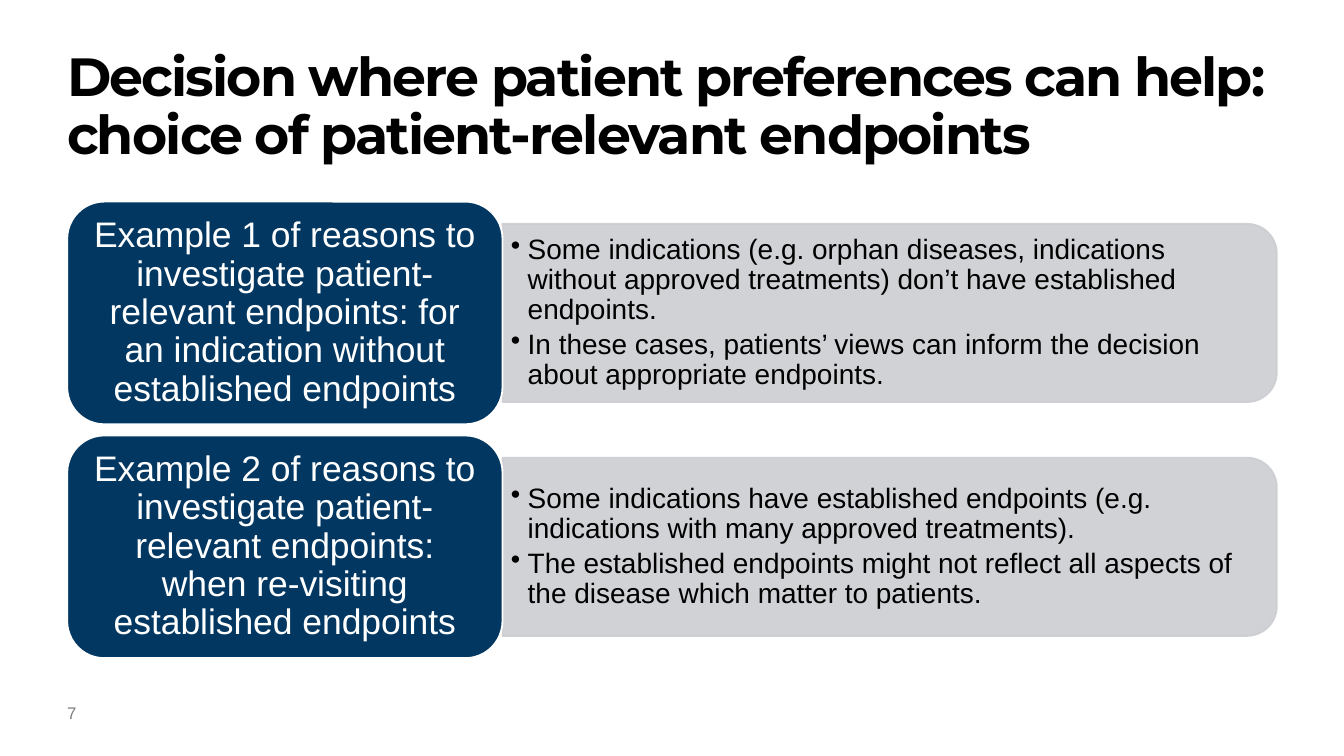
from lxml import etree
from pptx import Presentation
from pptx.dml.color import RGBColor
from pptx.enum.shapes import MSO_SHAPE
from pptx.enum.text import MSO_ANCHOR, MSO_AUTO_SIZE, PP_ALIGN
from pptx.oxml.ns import qn
from pptx.util import Pt

LEFT, CENTER = PP_ALIGN.LEFT, PP_ALIGN.CENTER
TOP, MIDDLE = MSO_ANCHOR.TOP, MSO_ANCHOR.MIDDLE

# Content
TITLE = "Decision where patient preferences can help: choice of patient-relevant endpoints"
PAGE_NUMBER = "7"
EXAMPLES = [
    ("Example 1 of reasons to investigate patient-relevant endpoints: "
     "for an indication without established endpoints",
     ["Some indications (e.g. orphan diseases, indications without approved "
      "treatments) don’t have established endpoints.",
      "In these cases, patients’ views can inform the decision about "
      "appropriate endpoints."]),
    ("Example 2 of reasons to investigate patient-relevant endpoints: "
     "when re-visiting established endpoints",
     ["Some indications have established endpoints (e.g. indications with "
      "many approved treatments).",
      "The established endpoints might not reflect all aspects of the disease "
      "which matter to patients."]),
]
COLORS = {"black": "000000", "white": "FFFFFF", "navy": "023761",
          "panel": "CCCED2", "gray": "7F7F7F"}

# Layout, in points
SLIDE_WIDTH, SLIDE_HEIGHT = 720, 405
MARGIN = 36
CARD_TOP, CARD_WIDTH, CARD_HEIGHT, CARD_GAP = 108, 233.2, 119.3, 6
PANEL_LEFT = MARGIN + CARD_WIDTH
PANEL_WIDTH = SLIDE_WIDTH - MARGIN - PANEL_LEFT
PANEL_HEIGHT = 0.8 * CARD_HEIGHT
BULLET_WIDTH, BULLET_HEIGHT = 410.4, 86.4
BULLET_INDENT = 9


def color(name):
    return RGBColor.from_string(COLORS[name])


def write(shape, texts, size, font_color, font="Arial", bold=None, align=LEFT,
          anchor=TOP, insets=(0, 0), line_spacing=0.9, space_after=0,
          tracking=None, bullets=False):
    frame = shape.text_frame
    frame.word_wrap = True
    frame.auto_size = MSO_AUTO_SIZE.NONE
    frame.vertical_anchor = anchor
    frame.margin_left = frame.margin_right = Pt(insets[0])
    frame.margin_top = frame.margin_bottom = Pt(insets[1])
    for index, text in enumerate(texts):
        paragraph = frame.paragraphs[0] if index == 0 else frame.add_paragraph()
        paragraph.alignment = align
        paragraph.line_spacing = line_spacing
        paragraph.space_before = Pt(0)
        paragraph.space_after = Pt(space_after)
        if bullets:
            properties = paragraph._p.get_or_add_pPr()
            properties.set("marL", str(Pt(BULLET_INDENT)))
            properties.set("indent", str(-Pt(BULLET_INDENT)))
            etree.SubElement(properties, qn("a:buChar")).set("char", "•")
        run = paragraph.add_run()
        run.text = text
        run.font.name = font
        run.font.size = Pt(size)
        run.font.bold = bold
        run.font.color.rgb = color(font_color)
        if tracking is not None:
            run.font._element.set("spc", str(round(tracking * 100)))


def add_box(slide, kind, left, top, width, height, fill, line, opacity=None):
    shape = slide.shapes.add_shape(kind, Pt(left), Pt(top), Pt(width), Pt(height))
    shape.shadow.inherit = False
    shape.fill.solid()
    shape.fill.fore_color.rgb = color(fill)
    shape.line.color.rgb = color(line)
    shape.line.width = Pt(1)
    if opacity is not None:
        for rgb in shape._element.spPr.iter(qn("a:srgbClr")):
            etree.SubElement(rgb, qn("a:alpha")).set("val", str(opacity * 1000))
    return shape


def add_text_box(slide, left, top, width, height, texts, **text_format):
    box = slide.shapes.add_textbox(Pt(left), Pt(top), Pt(width), Pt(height))
    write(box, texts, **text_format)


def add_example(slide, top, heading, points):
    middle = top + CARD_HEIGHT / 2
    # Panel: a shape with two round top corners, turned a quarter clockwise
    panel = add_box(slide, MSO_SHAPE.ROUND_2_SAME_RECTANGLE,
                    PANEL_LEFT + (PANEL_WIDTH - PANEL_HEIGHT) / 2,
                    middle - PANEL_WIDTH / 2, PANEL_HEIGHT, PANEL_WIDTH,
                    "panel", "panel", opacity=90)
    panel.rotation = 90
    add_text_box(slide, PANEL_LEFT, middle - BULLET_HEIGHT / 2,
                 BULLET_WIDTH, BULLET_HEIGHT, points, size=15,
                 font_color="black", anchor=MIDDLE, insets=(4.5, 2.25),
                 space_after=2.25, bullets=True)
    # Heading card
    card = add_box(slide, MSO_SHAPE.ROUNDED_RECTANGLE, MARGIN, top,
                   CARD_WIDTH, CARD_HEIGHT, "navy", "white")
    write(card, [heading], size=19, font_color="white", align=CENTER,
          anchor=MIDDLE, insets=(5.7, 2.85))


def main():
    presentation = Presentation()
    presentation.slide_width = Pt(SLIDE_WIDTH)
    presentation.slide_height = Pt(SLIDE_HEIGHT)
    slide = presentation.slides.add_slide(presentation.slide_layouts[5])

    # Title
    title = slide.shapes.title
    title.left, title.top = Pt(MARGIN), Pt(27)
    title.width, title.height = Pt(SLIDE_WIDTH - 2 * MARGIN), Pt(75.6)
    write(title, [TITLE], size=28.8, font_color="black", font="Montserrat",
          bold=True, tracking=-1)

    # Page number
    add_text_box(slide, MARGIN, 376.5, 18, 18, [PAGE_NUMBER], size=9,
                 font_color="gray", line_spacing=1)

    # Examples
    for row, (heading, points) in enumerate(EXAMPLES):
        add_example(slide, CARD_TOP + row * (CARD_HEIGHT + CARD_GAP), heading, points)

    presentation.save("out.pptx")


if __name__ == "__main__":
    main()
